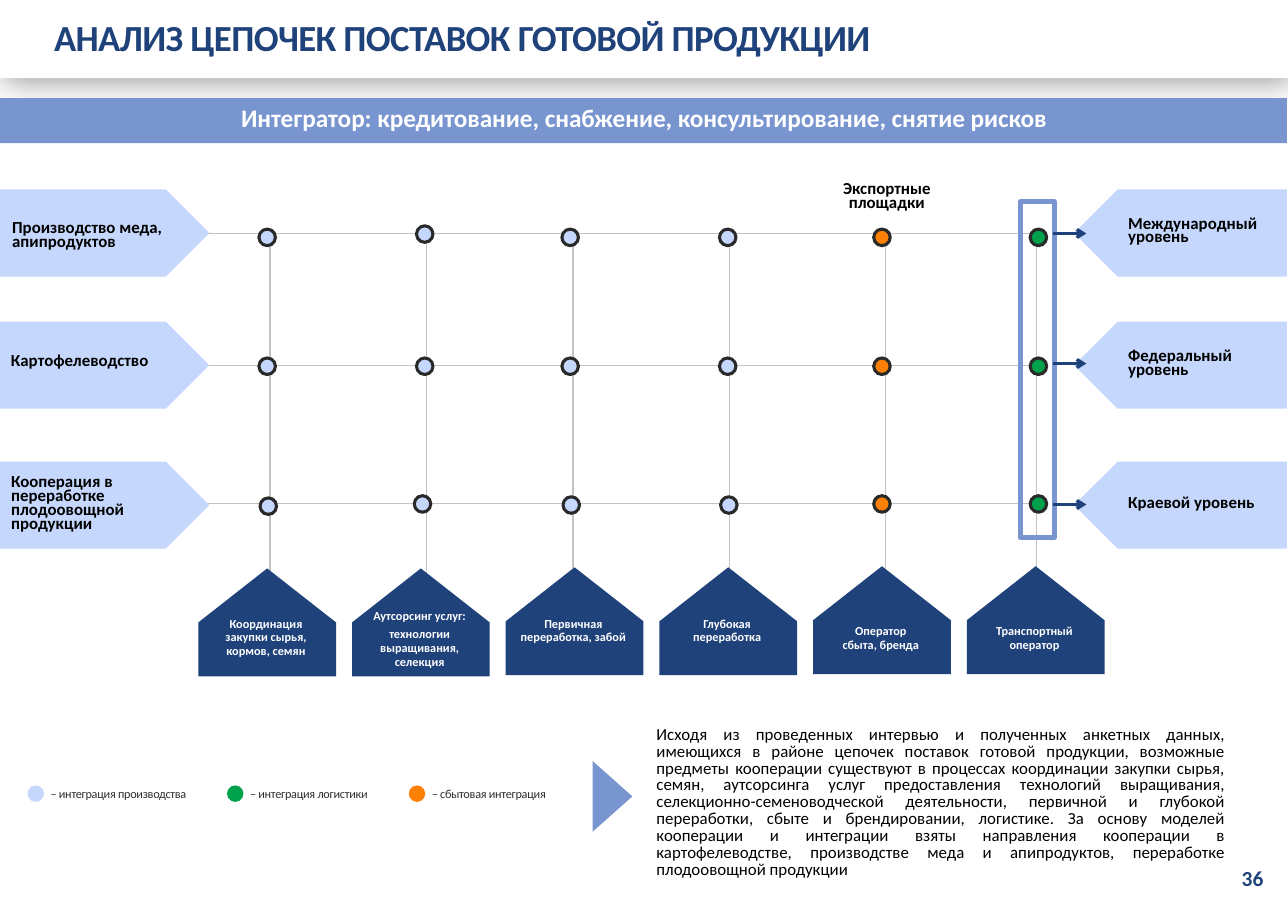
from lxml.etree import SubElement
from pptx import Presentation
from pptx.dml.color import RGBColor
from pptx.enum.shapes import MSO_CONNECTOR, MSO_SHAPE
from pptx.enum.text import MSO_ANCHOR, MSO_AUTO_SIZE, PP_ALIGN
from pptx.oxml import parse_xml
from pptx.oxml.ns import nsdecls, qn
from pptx.util import Inches, Pt

# Content
TITLE = "АНАЛИЗ ЦЕПОЧЕК ПОСТАВОК ГОТОВОЙ ПРОДУКЦИИ"
INTEGRATOR = "Интегратор: кредитование, снабжение, консультирование, снятие рисков"
EXPORT_SITES = "Экспортные площадки"
PAGE_NUMBER = "36"
SUMMARY = (
    "Исходя из проведенных интервью и полученных анкетных данных, имеющихся в районе "
    "цепочек поставок готовой продукции, возможные предметы кооперации существуют в "
    "процессах координации закупки сырья, семян, аутсорсинга услуг предоставления "
    "технологий выращивания, селекционно-семеноводческой деятельности, первичной и "
    "глубокой переработки, сбыте и брендировании, логистике. За основу моделей "
    "кооперации и интеграции взяты направления кооперации в картофелеводстве, "
    "производстве меда и апипродуктов, переработке плодоовощной продукции"
)
# Text, box (left, top, width, height), space after
DIRECTIONS = [
    ("Производство меда, апипродуктов", (0.11, 1.86, 1.65, 0.58), 3.85),
    ("Картофелеводство", (0.1, 3.17, 1.97, 0.25), 3.85),
    ("Кооперация в переработке плодоовощной продукции", (0.1, 4.26, 1.55, 0.65), 0),
]
LEVELS = [
    ("Международный уровень", (10.18, 1.92, 1.79, 0.38)),
    ("Федеральный уровень", (10.18, 3.12, 1.56, 0.38)),
    ("Краевой уровень", (10.18, 4.46, 1.31, 0.25)),
]
# Paragraphs, text top, kind of integration
STAGES = [
    (["Координация", "закупки сырья, кормов, семян"], 5.54, "production"),
    (["Аутсорсинг услуг:", "технологии выращивания, селекция"], 5.47, "production"),
    (["Первичная переработка, забой"], 5.54, "production"),
    (["Глубокая", "переработка"], 5.54, "production"),
    (["Оператор", "сбыта, бренда"], 5.61, "sales"),
    (["Транспортный", "оператор"], 5.61, "logistics"),
]
LEGEND = [
    ("– интеграция производства", "production", 0.25),
    ("– интеграция логистики", "logistics", 2.06),
    ("– сбытовая интеграция", "sales", 3.71),
]
COLORS = {
    "navy": "1F427B", "blue": "7895D0", "production": "C5D7FC",
    "logistics": "00A14B", "sales": "FB8005", "ring": "292929",
    "grid": "C2C3C3", "legend": "2B2F32", "white": "FFFFFF", "black": "000000",
}

# Grid
SLIDE_W, SLIDE_H = 11.69, 8.27
GRID_LEFT, GRID_TOP = 1.84, 2.12
GRID_COLS = [0.61, 1.42, 1.33, 1.42, 1.42, 1.37]
GRID_ROWS = [1.2, 1.25, 1.49]
NODE = 0.15
NODE_X = [2.35, 3.78, 5.1, 6.53, 7.93, 9.35]
NODE_Y = [2.08, 3.25, 4.5]
NODE_SHIFT = {(0, 1): (0, -0.03), (2, 0): (0.01, 0.02), (2, 1): (-0.02, 0),
              (2, 2): (0.01, 0.01), (2, 3): (0.01, 0.01)}
FLAG_Y = [1.72, 2.92, 4.19]
FLAG_W, FLAG_H = 1.93, 0.79
ARROW_Y = [2.12, 3.3, 4.58]
HOUSE_LEFT, HOUSE_STEP, HOUSE_W, HOUSE_H = 1.8, 1.395, 1.25, 0.98

prs = Presentation()
prs.slide_width, prs.slide_height = Inches(SLIDE_W), Inches(SLIDE_H)
slide = prs.slides.add_slide(prs.slide_layouts[5])
shapes = slide.shapes


def rgb(name):
    return RGBColor.from_string(COLORS[name])


def add_block(kind, box, fill=None, line=None, width=0):
    block = shapes.add_shape(kind, *map(Inches, box))
    block.shadow.inherit = False
    if fill:
        block.fill.solid()
        block.fill.fore_color.rgb = rgb(fill)
    else:
        block.fill.background()
    if line:
        block.line.color.rgb = rgb(line)
        block.line.width = Pt(width)
    else:
        block.line.fill.background()
    return block


def write(frame, paragraphs, size, color, bold=False, align=PP_ALIGN.LEFT, leading=1.0,
          before=0, after=0, spacing=0, insets=(0.06,) * 4, anchor=MSO_ANCHOR.TOP):
    frame.word_wrap = True
    frame.auto_size = MSO_AUTO_SIZE.NONE
    frame.vertical_anchor = anchor
    (frame.margin_left, frame.margin_top,
     frame.margin_right, frame.margin_bottom) = map(Inches, insets)
    for i, text in enumerate(paragraphs):
        paragraph = frame.add_paragraph() if i else frame.paragraphs[0]
        paragraph.alignment = align
        paragraph.line_spacing = leading
        paragraph.space_before, paragraph.space_after = Pt(before), Pt(after)
        run = paragraph.add_run()
        run.text = text
        run.font.name, run.font.size, run.font.bold = "Calibri", Pt(size), bold
        run.font.color.rgb = rgb(color)
        if spacing:
            run.font._element.set("spc", str(spacing))


def add_text(box, paragraphs, size, color, **style):
    frame = shapes.add_textbox(*map(Inches, box)).text_frame
    write(frame, paragraphs, size, color, **style)


def set_borders(cell, sides):
    cell.fill.background()
    for i, (side, color) in enumerate(sides.items()):
        cell._tc.get_or_add_tcPr().insert(i, parse_xml(
            f'<a:ln{side} {nsdecls("a")} w="12700"><a:solidFill>'
            f'<a:srgbClr val="{COLORS[color]}"/></a:solidFill></a:ln{side}>'))


# Header bar with a soft shadow, and the title above it
header = add_block(MSO_SHAPE.RECTANGLE, (0, 0, SLIDE_W, 0.71), "white")
effects = header._element.spPr.find(qn("a:effectLst"))
effects.append(parse_xml(
    f'<a:outerShdw {nsdecls("a")} blurRad="{Pt(22)}" dist="{Pt(3)}" dir="2700000" '
    'rotWithShape="0"><a:srgbClr val="000000"><a:alpha val="40000"/></a:srgbClr></a:outerShdw>'))
title = shapes.title
title._element.addprevious(header._element)
title.left, title.top, title.width, title.height = map(Inches, (0.49, 0.12, 11.19, 0.42))
write(title.text_frame, [TITLE], 24, "navy", bold=True, before=1, spacing=-40,
      insets=(0, 0.01, 0, 0))

# Integrator band
add_block(MSO_SHAPE.RECTANGLE, (0, 0.89, 11.68, 0.41), "blue")
add_text((1.46, 0.96, 8.77, 0.25), [INTEGRATOR], 16.5, "white", bold=True, leading=Pt(16),
         before=1.2, align=PP_ALIGN.CENTER, insets=(0, 0.02, 0, 0))

# Supply chain grid
grid = shapes.add_table(len(GRID_ROWS), len(GRID_COLS), *map(
    Inches, (GRID_LEFT, GRID_TOP, sum(GRID_COLS), sum(GRID_ROWS)))).table
grid.first_row = grid.horz_banding = False
for column, width in zip(grid.columns, GRID_COLS):
    column.width = Inches(width)
for r, height in enumerate(GRID_ROWS):
    grid.rows[r].height = Inches(height)
    for c in range(len(GRID_COLS)):
        set_borders(grid.cell(r, c), {
            "L": "grid" if c else "white", "R": "grid", "T": "grid",
            "B": "white" if r == len(GRID_ROWS) - 1 else "grid"})

# Stage houses
for i, (lines, text_top, _) in enumerate(STAGES):
    left = HOUSE_LEFT + i * HOUSE_STEP
    top = 5.16 - 0.01 * (i // 2)
    turn = (HOUSE_W - HOUSE_H) / 2
    house = add_block(MSO_SHAPE.PENTAGON, (left + turn, top - turn, HOUSE_H, HOUSE_W), "navy")
    house.rotation = 270
    add_text((left, text_top, 1.23, 0.5), lines, 8, "white", bold=True, leading=Pt(9),
             after=2.8 if i == 1 else 0, align=PP_ALIGN.CENTER)

# Transport frame and nodes
add_text((7.27, 1.61, 1.56, 0.38), [EXPORT_SITES], 11, "black", bold=True, leading=Pt(9),
         after=3.85, align=PP_ALIGN.CENTER, insets=(0.3, 0.06, 0.3, 0.06),
         anchor=MSO_ANCHOR.MIDDLE)
add_block(MSO_SHAPE.RECTANGLE, (9.26, 1.83, 0.31, 3.05), line="blue", width=3)
for r, y in enumerate(NODE_Y):
    for c, x in enumerate(NODE_X):
        dx, dy = NODE_SHIFT.get((r, c), (0, 0))
        add_block(MSO_SHAPE.OVAL, (x + dx, y + dy, NODE, NODE), STAGES[c][2], "ring", 2)

# Directions on the left, market levels on the right
label_style = dict(bold=True, leading=Pt(9), anchor=MSO_ANCHOR.MIDDLE)
for y, (direction, box, after), (level, level_box) in zip(FLAG_Y, DIRECTIONS, LEVELS):
    add_block(MSO_SHAPE.PENTAGON, (-0.03, y, FLAG_W, FLAG_H), "production")
    flag = add_block(MSO_SHAPE.PENTAGON, (9.75, y, FLAG_W, FLAG_H), "production")
    flag._element.spPr.find(qn("a:xfrm")).set("flipH", "1")
    add_text(box, [direction], 11, "black", after=after, insets=(0, 0.05, 0.1, 0.05),
             **label_style)
    add_text(level_box, [level], 11, "black", after=3.85, **label_style)
for y in ARROW_Y:
    arrow = shapes.add_connector(MSO_CONNECTOR.STRAIGHT, *map(Inches, (9.56, y, 9.86, y)))
    arrow.line.color.rgb = rgb("navy")
    arrow.line.width = Pt(2)
    SubElement(arrow.line._get_or_add_ln(), qn("a:tailEnd"), type="arrow")
    SubElement(arrow._element.spPr, qn("a:effectLst"))

# Legend
for text, kind, x in LEGEND:
    add_block(MSO_SHAPE.OVAL, (x, 7.13, NODE, NODE), kind)
    add_text((x + 0.21, 7.13, 1.44, NODE), [text], 8, "legend", leading=Pt(8), before=2.4,
             spacing=-20, insets=(0, 0.03, 0, 0))

# Summary with its pointer, and the page number
pointer = shapes.build_freeform(Inches(5.38), Inches(6.91), scale=1.0)
pointer.add_line_segments([(Inches(5.38), Inches(7.55)), (Inches(5.74), Inches(7.23))])
triangle = pointer.convert_to_shape()
triangle.shadow.inherit = False
triangle.fill.solid()
triangle.fill.fore_color.rgb = rgb("blue")
triangle.line.fill.background()
add_text((5.86, 6.55, 5.36, 1.49), [SUMMARY], 11, "black", leading=Pt(11),
         align=PP_ALIGN.JUSTIFY, insets=(0.1, 0.05, 0.1, 0.05))
add_text((11.2, 7.8, 0.48, 0.47), [PAGE_NUMBER], 14, "navy", bold=True, before=2.1,
         insets=(0.07, 0.05, 0.1, 0.05))

prs.save("out.pptx")
